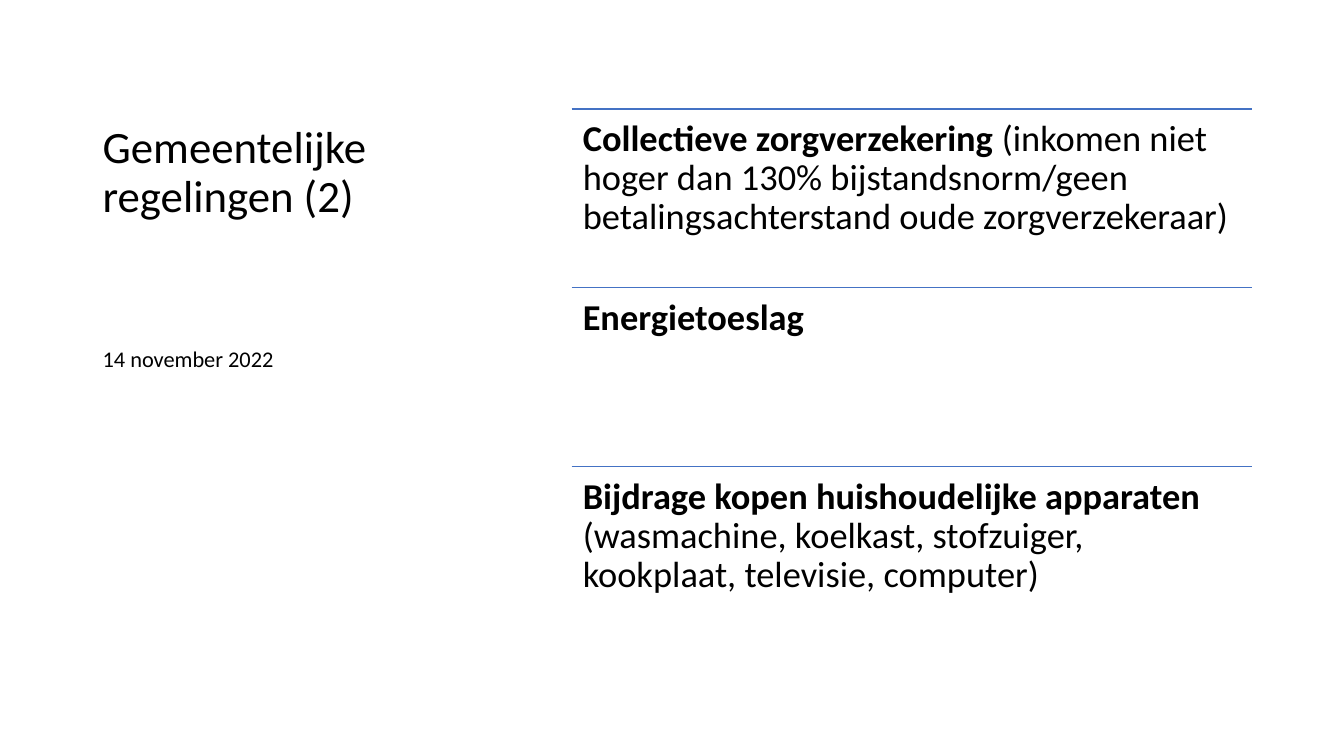
from dataclasses import dataclass

from lxml import etree
from pptx import Presentation
from pptx import util as u
from pptx.dml.color import RGBColor
from pptx.enum import shapes, text
from pptx.oxml import ns


@dataclass(frozen=True)
class Theme:
    font: str = "Calibri"
    ink: RGBColor = RGBColor(0, 0, 0)
    rule: RGBColor = RGBColor(0x44, 0x72, 0xC4)
    title_size: int = 32
    item_size: int = 26
    date_size: int = 16
    rule_width: int = 1
    line_spacing: float = 0.9


class SlideBuilder:
    def __init__(self, s, theme):
        self.s, self.theme = s, theme

    def text(self, box, runs, size, inset=(0.1, 0.05),
             anchor=text.MSO_ANCHOR.TOP):
        """Add one paragraph; runs holds (wording, bold) pairs."""
        tf = self.s.shapes.add_textbox(*map(u.Inches, box)).text_frame
        dx, dy = map(u.Inches, inset)
        frame_format = dict(word_wrap=True, vertical_anchor=anchor,
                            margin_left=dx, margin_right=dx,
                            margin_top=dy, margin_bottom=dy)
        for name, value in frame_format.items():
            setattr(tf, name, value)
        p = tf.paragraphs[0]
        p.line_spacing = self.theme.line_spacing
        for wording, bold in runs:
            r = p.add_run()
            r.text = wording
            font_format = dict(name=self.theme.font, size=u.Pt(size), bold=bold)
            for name, value in font_format.items():
                setattr(r.font, name, value)
            r.font.color.rgb = self.theme.ink

    def rule(self, left, top, width):
        ends = map(u.Inches, (left, top, left + width, top))
        line = self.s.shapes.add_connector(shapes.MSO_CONNECTOR.STRAIGHT, *ends)
        line.line.color.rgb = self.theme.rule
        line.line.width = u.Pt(self.theme.rule_width)
        etree.SubElement(line._element.spPr, ns.qn("a:effectLst"))

    def items(self, left, top, width, row_height, entries):
        """Stack entries in equal rows, each under a rule."""
        for i, runs in enumerate(entries):
            y = top + i * row_height
            self.rule(left, y, width)
            self.text((left, y, width, row_height), runs,
                      self.theme.item_size, inset=(0.11, 0.11))


SCHEMES = [
    [("Collectieve zorgverzekering ", True),
     ("(inkomen niet hoger dan 130% bijstandsnorm/geen "
      "betalingsachterstand oude zorgverzekeraar)", False)],
    [("Energietoeslag", True)],
    [("Bijdrage kopen huishoudelijke apparaten", True),
     (" (wasmachine, koelkast, stofzuiger, kookplaat, televisie, computer)",
      False)],
]


def main():
    prs = Presentation()
    prs.slide_width, prs.slide_height = u.Inches(13.33), u.Inches(7.5)
    theme = Theme()
    slide = SlideBuilder(prs.slides.add_slide(prs.slide_layouts[6]), theme)
    slide.text((0.92, 0.5, 4.3, 1.75), [("Gemeentelijke regelingen (2)", False)],
               theme.title_size, anchor=text.MSO_ANCHOR.BOTTOM)
    slide.items(5.67, 1.08, 6.75, 1.775, SCHEMES)
    slide.text((0.92, 3.41, 4.3, 3.01), [("14 november 2022", False)],
               theme.date_size)
    prs.save("out.pptx")


if __name__ == "__main__":
    main()
